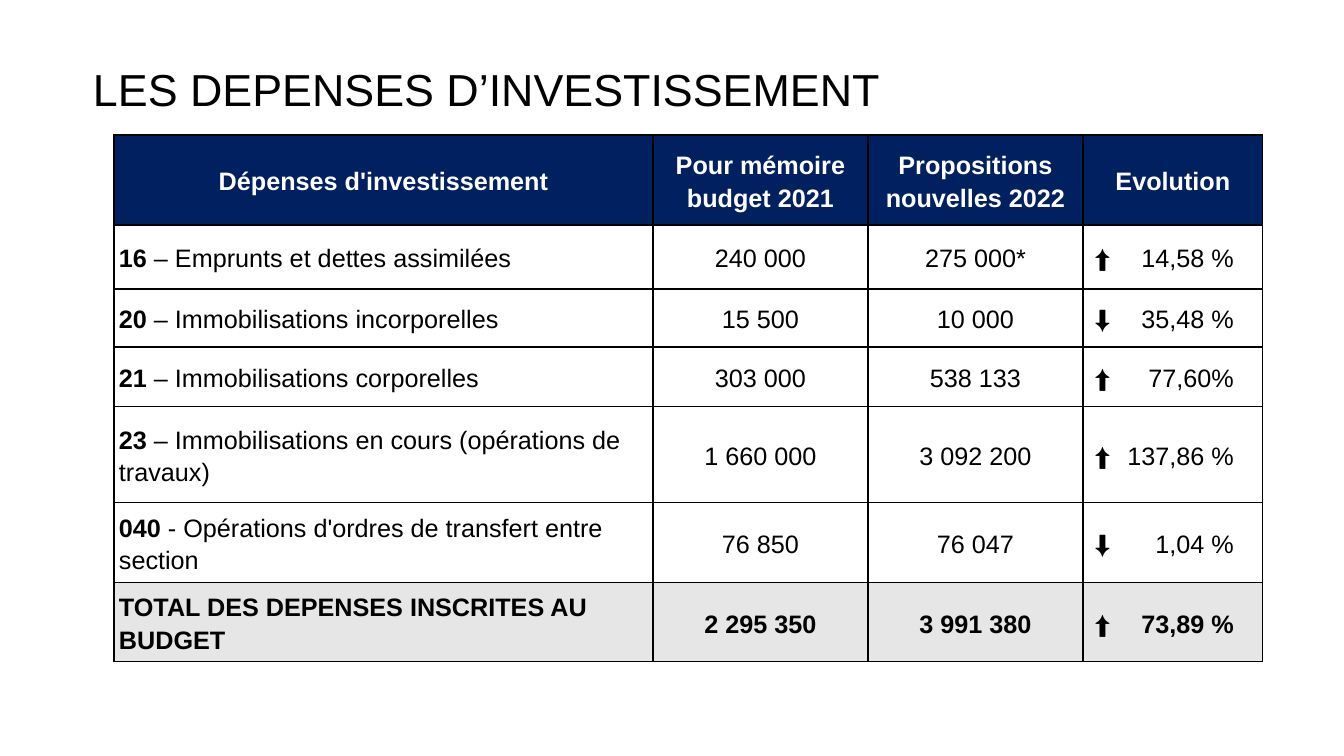
from lxml import etree
from pptx import Presentation
from pptx.dml.color import RGBColor
from pptx.enum.text import MSO_ANCHOR, MSO_AUTO_SIZE, PP_ALIGN
from pptx.oxml.ns import qn
from pptx.util import Pt

MIDDLE = MSO_ANCHOR.MIDDLE
LEFT, CENTER = PP_ALIGN.LEFT, PP_ALIGN.CENTER
NO_AUTOFIT = MSO_AUTO_SIZE.NONE

EMU_PER_PX = 914400 / 100.8
NAVY, GREY, WHITE, BLACK = "002060", "E7E6E6", "FFFFFF", "000000"
ARROW_FONTS = {"⬆": "Arial", "⬇": "Calibri"}

COLUMN_WIDTHS = [539, 215, 215, 180]
ROW_HEIGHTS = [90, 64, 58, 60, 96, 80, 79]
EVOLUTION_INSET = 12
PERCENT_TAB = 139

HEADINGS = ["Dépenses d'investissement", "Pour mémoire budget 2021",
            "Propositions nouvelles 2022", "Evolution"]
# Chapter code, label, budget 2021, proposal 2022, arrow, change
EXPENSES = [
    ("16", " – Emprunts et dettes assimilées", "240 000", "275 000*", "⬆", "14,58 %"),
    ("20", " – Immobilisations incorporelles", "15 500", "10 000", "⬇", "35,48 %"),
    ("21", " – Immobilisations corporelles", "303 000", "538 133", "⬆", "77,60%"),
    ("23", " – Immobilisations en cours (opérations de travaux)",
     "1 660 000", "3 092 200", "⬆", "137,86 %"),
    ("040", " - Opérations d'ordres de transfert entre section",
     "76 850", "76 047", "⬇", "1,04 %"),
    ("TOTAL DES DEPENSES INSCRITES AU BUDGET", "",
     "2 295 350", "3 991 380", "⬆", "73,89 %"),
]


def px(length):
    return round(length * EMU_PER_PX)


def fill_cell(cell, parts, align, fill, color):
    """Write (text, bold, font) parts into a cell with thin black borders."""
    cell.fill.solid()
    cell.fill.fore_color.rgb = RGBColor.from_string(fill)
    cell.vertical_anchor = MIDDLE
    cell.margin_left = cell.margin_right = px(5)
    cell.margin_top = cell.margin_bottom = 0
    paragraph = cell.text_frame.paragraphs[0]
    paragraph.alignment = align
    paragraph.line_spacing = 1.15
    paragraph.space_after = Pt(10)
    for text, bold, font in parts:
        run = paragraph.add_run()
        run.text = text
        run.font.size = Pt(18)
        run.font.name = font
        run.font.bold = bold
        run.font.color.rgb = RGBColor.from_string(color)
    properties = cell._tc.get_or_add_tcPr()
    for position, side in enumerate(("a:lnL", "a:lnR", "a:lnT", "a:lnB")):
        border = etree.Element(qn(side), w=str(Pt(1)))
        line = etree.SubElement(border, qn("a:solidFill"))
        etree.SubElement(line, qn("a:srgbClr"), val=BLACK)
        properties.insert(position, border)


prs = Presentation()
prs.slide_width, prs.slide_height = px(1344), px(756)
slide = prs.slides.add_slide(prs.slide_layouts[5])

# Title
title = slide.shapes.title
title.left, title.top, title.width, title.height = px(93), px(50), px(1210), px(84)
heading = title.text_frame
heading.text = "LES DEPENSES D’INVESTISSEMENT"
heading.auto_size = NO_AUTOFIT
heading.word_wrap = True
heading.vertical_anchor = MIDDLE
heading.margin_left = heading.margin_right = 0
heading.margin_top = heading.margin_bottom = 0
heading.paragraphs[0].alignment = LEFT
heading.paragraphs[0].line_spacing = 0.9
title_font = heading.paragraphs[0].runs[0].font
title_font.size = Pt(32)
title_font.name = "Arial"
title_font.color.rgb = RGBColor.from_string(BLACK)

# Table grid
budget = slide.shapes.add_table(
    len(ROW_HEIGHTS), len(COLUMN_WIDTHS), px(114), px(135),
    px(sum(COLUMN_WIDTHS)), px(sum(ROW_HEIGHTS))).table
budget.first_row = budget.horz_banding = False
for column, width in zip(budget.columns, COLUMN_WIDTHS):
    column.width = px(width)
for row, height in zip(budget.rows, ROW_HEIGHTS):
    row.height = px(height)

# Header row
for column, text in enumerate(HEADINGS):
    fill_cell(budget.cell(0, column), [(text, True, "Arial")], CENTER, NAVY, WHITE)

# Expense rows, the last one being the total
for row, (code, label, previous, proposed, arrow, change) in enumerate(EXPENSES, 1):
    is_total = row == len(EXPENSES)
    fill = GREY if is_total else WHITE
    name = [(code, True, "Arial")]
    if label:
        name.append((label, False, "Arial"))
    fill_cell(budget.cell(row, 0), name, LEFT, fill, BLACK)
    for column, amount in enumerate((previous, proposed), 1):
        fill_cell(budget.cell(row, column), [(amount, is_total, "Arial")],
                  CENTER, fill, BLACK)

    # The percentage is aligned on a right tab after the arrow
    evolution = budget.cell(row, 3)
    fill_cell(evolution, [(arrow, True, ARROW_FONTS[arrow]),
                          ("\t" + change, is_total, "Arial")], LEFT, fill, BLACK)
    evolution.margin_left = px(EVOLUTION_INSET)
    paragraph_format = evolution.text_frame.paragraphs[0]._p.get_or_add_pPr()
    tabs = etree.SubElement(paragraph_format, qn("a:tabLst"))
    etree.SubElement(tabs, qn("a:tab"), pos=str(px(PERCENT_TAB)), algn="r")

prs.save("out.pptx")
